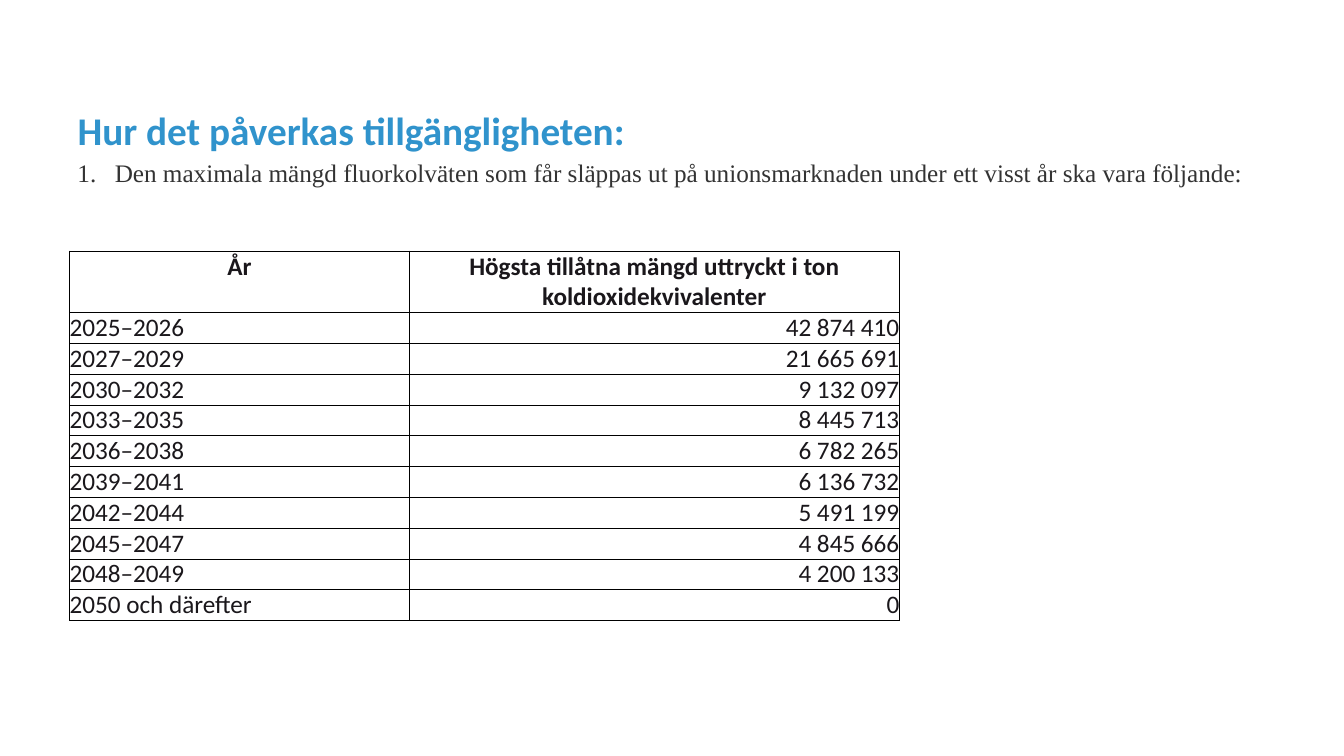
"""Build a slide with the yearly limits for fluorocarbons on the EU market."""
from pptx import Presentation
from pptx import oxml
from pptx.dml.color import RGBColor
from pptx.enum import text
from pptx.util import Inches, Pt

COLORS = {"title": "3093CC", "body": "333333", "table": "1A171B",
          "border": "000000", "cell": "FFFFFF"}
NS = 'xmlns:a="http://schemas.openxmlformats.org/drawingml/2006/main"'
ALIGN = text.PP_ALIGN


def write(p, words, color, align=ALIGN.LEFT, **font):
    p.alignment = align
    r = p.add_run()
    r.text = words
    values = {"name": "Calibri", "size": Pt(18), "bold": False, **font}
    for name, value in values.items():
        setattr(r.font, name, value)
    r.font.color.rgb = RGBColor.from_string(COLORS[color])


prs = Presentation()
prs.slide_width, prs.slide_height = Inches(13.33), Inches(7.5)
s = prs.slides.add_slide(prs.slide_layouts[5])

title = s.shapes.title
title.left, title.top = Inches(0.67), Inches(0.3)
title.width, title.height = Inches(11.98), Inches(1.27)
title.text_frame.vertical_anchor = text.MSO_ANCHOR.BOTTOM
write(title.text_frame.paragraphs[0], "Hur det påverkas tillgängligheten:",
      "title", size=Pt(28), bold=True)

rows = [
    ("År", "Högsta tillåtna mängd uttryckt i ton koldioxidekvivalenter"),
    ("2025–2026", "42 874 410"),
    ("2027–2029", "21 665 691"),
    ("2030–2032", "9 132 097"),
    ("2033–2035", "8 445 713"),
    ("2036–2038", "6 782 265"),
    ("2039–2041", "6 136 732"),
    ("2042–2044", "5 491 199"),
    ("2045–2047", "4 845 666"),
    ("2048–2049", "4 200 133"),
    ("2050 och därefter", "0"),
]
table = s.shapes.add_table(len(rows), 2, Inches(0.69), Inches(2.49),
                           Inches(8.23), Inches(3.6)).table
table.first_row = table.horz_banding = False
for column, width in zip(table.columns, (3.37, 4.86)):
    column.width = Inches(width)

for i, row in enumerate(rows):
    header = i == 0
    table.rows[i].height = Inches(0.6 if header else 0.3)
    for j, words in enumerate(row):
        cell = table.cell(i, j)
        for side in ("left", "top", "right", "bottom"):
            setattr(cell, f"margin_{side}", 0)
        for edge in "LRTB":
            cell._tc.get_or_add_tcPr().append(oxml.parse_xml(
                f'<a:ln{edge} {NS} w="{Pt(0.6)}"><a:solidFill>'
                f'<a:srgbClr val="{COLORS["border"]}"/></a:solidFill></a:ln{edge}>'))
        cell.fill.solid()
        cell.fill.fore_color.rgb = RGBColor.from_string(COLORS["cell"])
        align = ALIGN.CENTER if header else (ALIGN.LEFT, ALIGN.RIGHT)[j]
        write(cell.text_frame.paragraphs[0], words, "table", align, bold=header)

intro = s.shapes.add_textbox(Inches(0.67), Inches(1.51), Inches(11.97), Inches(0.4))
tf = intro.text_frame
tf.word_wrap = True
tf.auto_size = text.MSO_AUTO_SIZE.SHAPE_TO_FIT_TEXT
p = tf.paragraphs[0]
pPr = p._p.get_or_add_pPr()
pPr.set("marL", str(Inches(0.37)))
pPr.set("indent", str(-Inches(0.37)))
pPr.append(oxml.parse_xml(f'<a:buFont {NS} typeface="Times New Roman"/>'))
pPr.append(oxml.parse_xml(f'<a:buAutoNum {NS} type="arabicPeriod"/>'))
write(p, "Den maximala mängd fluorkolväten som får släppas ut på unionsmarknaden "
      "under ett visst år ska vara följande:", "body", name="Times New Roman")

prs.save("out.pptx")
